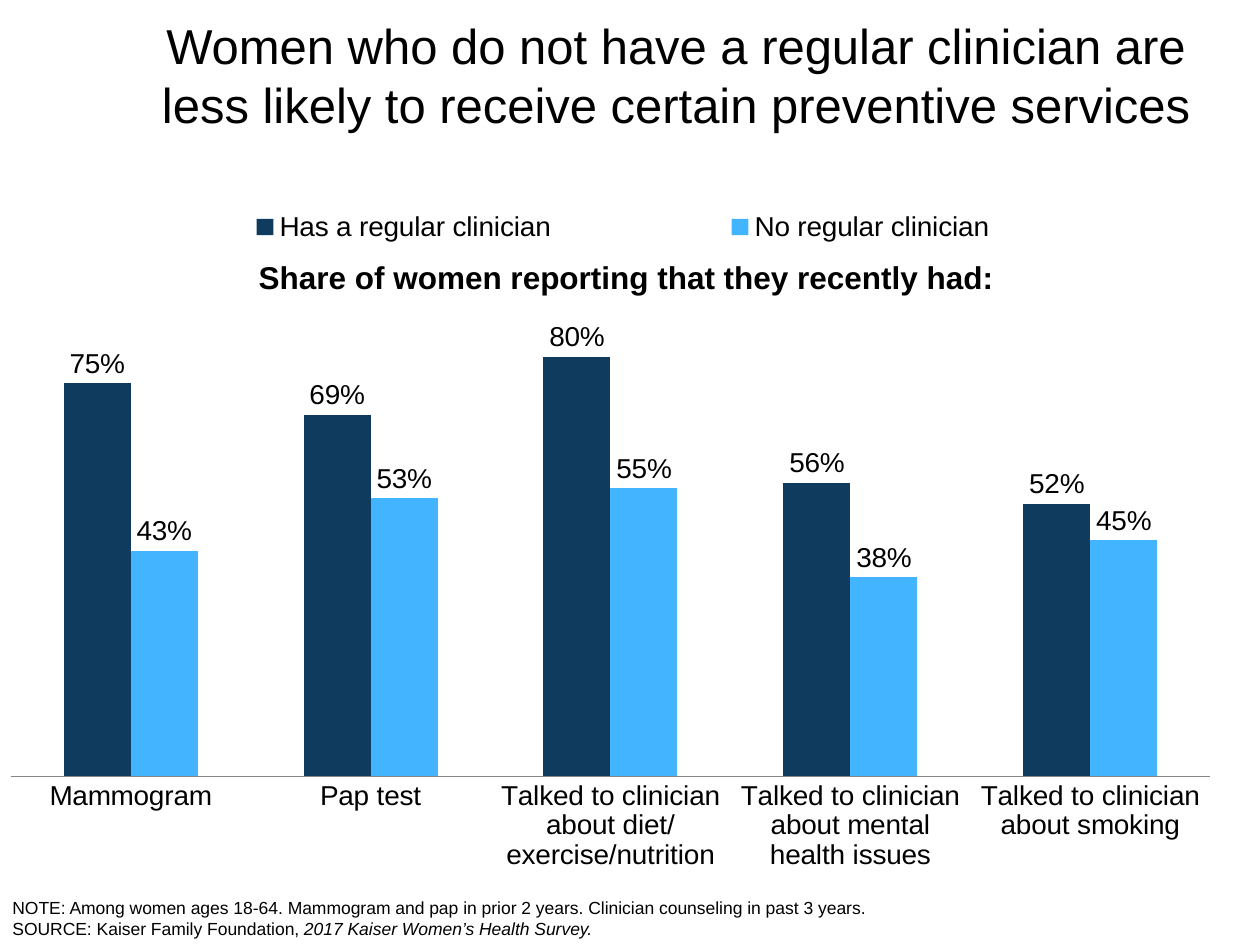
from lxml import etree
from pptx import Presentation
from pptx.chart.data import CategoryChartData
from pptx.dml.color import RGBColor
from pptx.enum.chart import (XL_CHART_TYPE, XL_LABEL_POSITION,
                             XL_LEGEND_POSITION, XL_TICK_MARK)
from pptx.enum.text import MSO_ANCHOR, PP_ALIGN
from pptx.oxml.ns import qn
from pptx.util import Inches, Pt

COLUMNS = XL_CHART_TYPE.COLUMN_CLUSTERED
OUTSIDE = XL_LABEL_POSITION.OUTSIDE_END
LEGEND_TOP = XL_LEGEND_POSITION.TOP
NO_TICK = XL_TICK_MARK.NONE
TOP, BOTTOM = MSO_ANCHOR.TOP, MSO_ANCHOR.BOTTOM
LEFT, CENTER = PP_ALIGN.LEFT, PP_ALIGN.CENTER

COLORS = {"text": "000000", "axis": "868686",
          "regular": "0E3B5E", "none": "43B4FF"}


def make_layout(x, y, w, h, inner=False):
    """Return a manual chart layout, in fractions of the chart area."""
    layout = etree.Element(qn("c:layout"))
    manual = etree.SubElement(layout, qn("c:manualLayout"))
    values = [("layoutTarget", "inner")] if inner else []
    values += [("xMode", "edge"), ("yMode", "edge"),
               ("x", x), ("y", y), ("w", w), ("h", h)]
    for tag, value in values:
        etree.SubElement(manual, qn("c:" + tag)).set("val", str(value))
    return layout


class Deck:
    font = "Arial"

    def __init__(self, width, height):
        self.prs = Presentation()
        self.prs.slide_width = Inches(width)
        self.prs.slide_height = Inches(height)
        self.slide = self.prs.slides.add_slide(self.prs.slide_layouts[6])

    def color(self, name):
        return RGBColor.from_string(COLORS[name])

    def style(self, font, size):
        font.name = self.font
        font.size = Pt(size)
        font.color.rgb = self.color("text")

    def text(self, box, lines, size, align=LEFT, anchor=TOP, pad=0.05):
        """Each line is a list of (text, bold, italic) runs."""
        frame = self.slide.shapes.add_textbox(*map(Inches, box)).text_frame
        frame.word_wrap = True
        frame.vertical_anchor = anchor
        frame.margin_top = frame.margin_bottom = Inches(pad)
        for i, line in enumerate(lines):
            para = frame.add_paragraph() if i else frame.paragraphs[0]
            para.alignment = align
            for words, bold, italic in line:
                run = para.add_run()
                run.text = words
                self.style(run.font, size)
                run.font.bold = bold
                run.font.italic = italic

    def chart(self, box, cats, series, size):
        data = CategoryChartData(number_format="0%")
        data.categories = cats
        for name, _, values in series:
            data.add_series(name, values)
        frame = self.slide.shapes.add_chart(COLUMNS, *map(Inches, box), data)
        chart = frame.chart
        chart.has_title = False
        self.style(chart.font, size)

        # Columns and their labels
        plot = chart.plots[0]
        plot.gap_width = 158
        plot.overlap = 0
        plot.vary_by_categories = False
        for bars, (_, color, _) in zip(plot.series, series):
            bars.format.fill.solid()
            bars.format.fill.fore_color.rgb = self.color(color)
            labels = bars.data_labels
            labels.show_value = True
            labels.position = OUTSIDE
            labels.number_format = "0%"
            labels.number_format_is_linked = False
            self.style(labels.font, size)

        # Axes
        axis = chart.value_axis
        axis.minimum_scale, axis.maximum_scale = 0, 0.9
        axis.has_major_gridlines = False
        axis.visible = False
        axis = chart.category_axis
        axis.major_tick_mark = axis.minor_tick_mark = NO_TICK
        axis.format.line.color.rgb = self.color("axis")
        self.style(axis.tick_labels.font, size)

        # Legend
        chart.has_legend = True
        legend = chart.legend
        legend.position = LEGEND_TOP
        legend.include_in_layout = False
        self.style(legend.font, size)

        # Fixed places for the plot and the legend
        root = chart.element
        area = root.find(".//" + qn("c:plotArea"))
        key = root.find(".//" + qn("c:legend"))
        for part in (area, key):
            for old in part.findall(qn("c:layout")):
                part.remove(old)
        area.insert(0, make_layout(0, 0.19, 0.97, 0.7, inner=True))
        key.find(qn("c:legendPos")).addnext(
            make_layout(0.06, 0.03, 0.87, 0.09))


def main():
    deck = Deck(10, 7.5)

    # Title
    deck.text((0.83, 0.06, 9.07, 1), [[(
        "Women who do not have a regular clinician are less likely to "
        "receive certain preventive services", False, False)]],
        28, CENTER, BOTTOM, pad=0)

    # Shares by service
    cats = ["Mammogram", "Pap test",
            "Talked to clinician about diet/ exercise/nutrition",
            "Talked to clinician about mental health issues",
            "Talked to clinician about smoking"]
    series = [
        ("Has a regular clinician", "regular", (0.75, 0.69, 0.8, 0.56, 0.52)),
        ("No regular clinician", "none", (0.43, 0.53, 0.55, 0.38, 0.45)),
    ]
    deck.chart((0.08, 1.4, 9.82, 5.5), cats, series, 16)

    # Note and source
    deck.text((0, 6.9, 8.98, 0.6), [
        [("NOTE: Among women ages 18-64. Mammogram and pap in prior 2 years. "
          "Clinician counseling in past 3 years.", False, False)],
        [("SOURCE: Kaiser Family Foundation, ", False, False),
         ("2017 Kaiser Women’s Health Survey.", False, True)],
    ], 10, anchor=BOTTOM)

    # Chart heading
    deck.text((0.38, 2, 9.25, 0.4), [[(
        "Share of women reporting that they recently had: ", True, False)]],
        18, CENTER)

    deck.prs.save("out.pptx")


if __name__ == "__main__":
    main()
